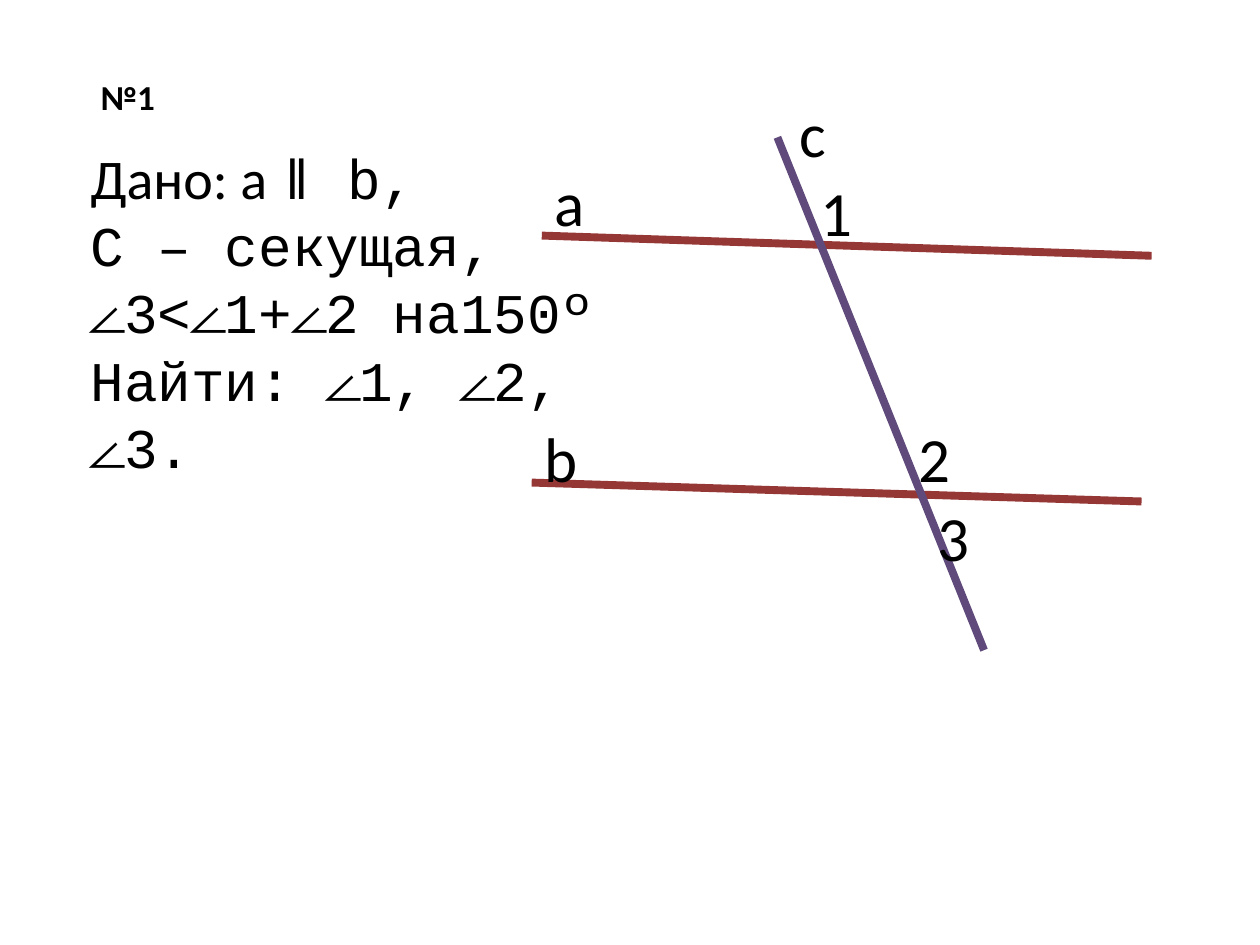
"""Build a geometry problem slide with two parallel lines and a transversal."""
from lxml.etree import SubElement
from pptx import Presentation
from pptx.dml.color import RGBColor
from pptx.enum.shapes import MSO_CONNECTOR
from pptx.oxml.ns import qn
from pptx.util import Inches, Pt

BLACK = RGBColor(0x00, 0x00, 0x00)
RED = RGBColor(0x95, 0x37, 0x35)
PURPLE = RGBColor(0x60, 0x4A, 0x7B)
BODY_FONT = "Calibri"
MONO_FONT = "Courier New"

presentation = Presentation()
presentation.slide_width = Inches(10)
presentation.slide_height = Inches(7.5)
slide = presentation.slides.add_slide(presentation.slide_layouts[6])


def add_text(left, top, width, height, lines, size, bold=False, wrap=False):
    shape = slide.shapes.add_textbox(
        Inches(left), Inches(top), Inches(width), Inches(height))
    frame = shape.text_frame
    frame.word_wrap = wrap
    for index, line in enumerate(lines):
        paragraph = frame.add_paragraph() if index else frame.paragraphs[0]
        for text, font_name in line:
            run = paragraph.add_run()
            run.text = text
            run.font.name = font_name
            run.font.size = Pt(size)
            run.font.bold = bold
            run.font.color.rgb = BLACK


add_text(0.7, 0.55, 0.76, 0.44, [[("№1", BODY_FONT)]], 20, bold=True)

geometry_lines = [
    (4.3, 1.87, 9.14, 2.03, RED),
    (4.22, 3.83, 9.06, 3.98, RED),
    (6.17, 1.09, 7.81, 5.16, PURPLE),
]
for start_x, start_y, end_x, end_y, color in geometry_lines:
    connector = slide.shapes.add_connector(
        MSO_CONNECTOR.STRAIGHT,
        Inches(start_x), Inches(start_y), Inches(end_x), Inches(end_y))
    connector.line.color.rgb = color
    connector.line.width = Pt(4.5)
    SubElement(connector._element.spPr, qn("a:effectLst"))

labels = [
    ("а", 4.3, 1.25, 0.51),
    ("b", 4.22, 3.28, 0.52),
    ("c", 6.25, 0.7, 0.46),
    ("1", 6.41, 1.33, 0.52),
    ("2", 7.19, 3.28, 0.52),
    ("3", 7.34, 3.91, 0.52),
]
for label, left, top, width in labels:
    add_text(left, top, width, 0.71, [[(label, BODY_FONT)]], 36)

problem = [
    [("Дано: а ", BODY_FONT), ("ǁ b,", MONO_FONT)],
    [("C – секущая,", MONO_FONT)],
    [("∠3<∠1+∠2 на150º", MONO_FONT)],
    [("Найти: ∠1, ∠2, ∠3.", MONO_FONT)],
]
add_text(0.62, 1.09, 4.55, 2.26, problem, 32, wrap=True)

presentation.save("out.pptx")
